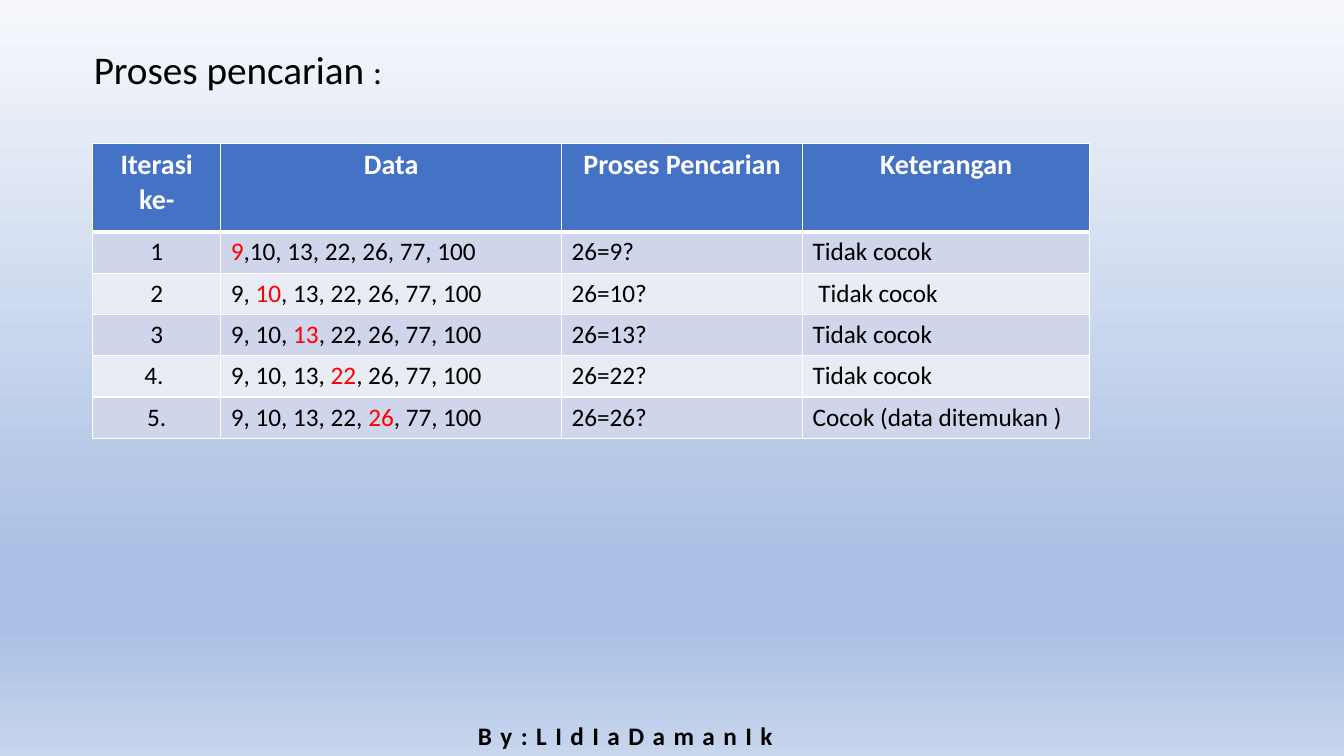
from copy import deepcopy
from lxml import etree
from pptx import Presentation
from pptx.dml.color import RGBColor
from pptx.enum import text as t
from pptx.oxml.ns import qn
from pptx.util import Inches, Pt

BLACK = RGBColor(0, 0, 0)
WHITE = RGBColor(255, 255, 255)
RED = RGBColor(255, 0, 0)
BLUE = RGBColor(0x44, 0x72, 0xC4)
BANDS = [RGBColor(0xCF, 0xD5, 0xEA), RGBColor(0xE9, 0xEB, 0xF5)]
SKY = [(0, RGBColor(0xF6, 0xF8, 0xFC)), (0.74, RGBColor(0xAB, 0xC0, 0xE4)),
       (0.83, RGBColor(0xAB, 0xC0, 0xE4)), (1, RGBColor(0xC7, 0xD5, 0xED))]


def write(para, words, size=18, color=BLACK, bold=False, align=t.PP_ALIGN.LEFT):
    para.alignment = align
    run = para.add_run()
    run.text = words
    font = run.font
    font.name, font.size, font.bold = "Calibri", Pt(size), bold
    font.color.rgb = color
    return run


def border(cell, side, width):
    props = cell._tc.get_or_add_tcPr()
    line = etree.SubElement(props, qn("a:ln" + side), w=str(Pt(width)))
    fill = etree.SubElement(line, qn("a:solidFill"))
    etree.SubElement(fill, qn("a:srgbClr"), val=str(WHITE))


deck = Presentation()
deck.slide_width, deck.slide_height = Inches(13.33), Inches(7.5)
slide = deck.slides.add_slide(deck.slide_layouts[5])

back = slide.background.fill
back.gradient()
back.gradient_angle = 270
stops = slide.element.find(".//" + qn("a:gsLst"))
for extra in range(2):
    stops.append(deepcopy(stops[0]))
for stop, (place, color) in zip(back.gradient_stops, SKY):
    stop.position = place
    stop.color.rgb = color

title = slide.shapes.title
title.left, title.top = Inches(0.83), Inches(0.45)
title.width, title.height = Inches(11.5), Inches(0.6)
frame = title.text_frame
frame.vertical_anchor = t.MSO_ANCHOR.TOP
frame.auto_size = t.MSO_AUTO_SIZE.NONE
head = frame.paragraphs[0]
head.line_spacing = 0.9
write(head, "Proses pencarian ", size=28)
write(head, ":", size=24)

heads = ["Iterasi ke-", "Data", "Proses Pencarian", "Keterangan"]
rows = [
    ("1", ["", "9", ",10, 13, 22, 26, 77, 100"], "26=9?", "Tidak cocok"),
    ("2", ["9, ", "10", ", 13, 22, 26, 77, 100"], "26=10?", " Tidak cocok"),
    ("3", ["9, 10, ", "13", ", 22, 26, 77, 100"], "26=13?", "Tidak cocok"),
    ("4. ", ["9, 10, 13, ", "22", ", 26, 77, 100"], "26=22?", "Tidak cocok"),
    ("5.", ["9, 10, 13, 22, ", "26", ", 77, 100"], "26=26?", "Cocok (data ditemukan )"),
]
table = slide.shapes.add_table(len(rows) + 1, len(heads), Inches(0.92), Inches(1.42),
                               Inches(9.89), Inches(2.93)).table
for col, width in zip(table.columns, [1.27, 3.38, 2.39, 2.85]):
    col.width = Inches(width)
for row in table.rows:
    row.height = Inches(0.41)
table.rows[0].height = Inches(0.88)

for r, row in enumerate([heads] + rows):
    for c, value in enumerate(row):
        cell = table.cell(r, c)
        for side in "LRTB":
            thick = (r, side) in [(0, "B"), (1, "T")]
            border(cell, side, 3 if thick else 1)
        cell.fill.solid()
        cell.fill.fore_color.rgb = BANDS[(r - 1) % 2] if r else BLUE
        para = cell.text_frame.paragraphs[0]
        if r == 0:
            write(para, value, size=20, color=WHITE, bold=True, align=t.PP_ALIGN.CENTER)
        elif c == 1:
            for part, color in zip(value, [BLACK, RED, BLACK]):
                if part:
                    write(para, part, color=color)
        else:
            write(para, value, align=t.PP_ALIGN.LEFT if c else t.PP_ALIGN.CENTER)

foot = slide.shapes.add_textbox(Inches(4.33), Inches(7.1), Inches(3.75), Inches(0.4))
foot.text_frame.word_wrap = True
name = write(foot.text_frame.paragraphs[0], "B y : L I d I a D a m a n I k",
             bold=True, align=t.PP_ALIGN.CENTER)
name.font._element.set("spc", "100")

deck.save("out.pptx")
